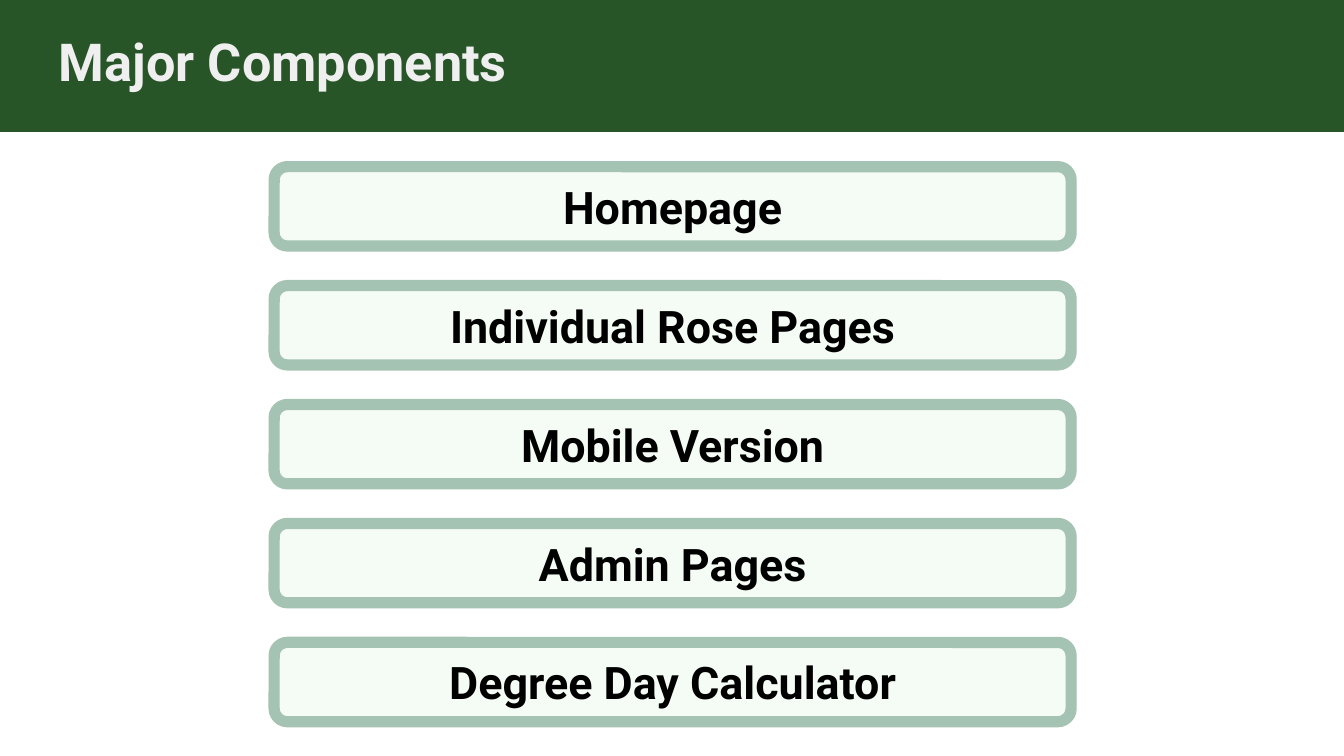
from pptx import Presentation
from pptx.dml.color import RGBColor
from pptx.enum import shapes, text
from pptx.util import Inches, Pt

COLORS = {
    "band": "285527",
    "panel": "FFFFFF",
    "title": "EFEFEF",
    "box": "F5FCF5",
    "edge": "A4C3B2",
    "label": "000000",
}
PARTS = [
    "Homepage",
    "Individual Rose Pages",
    "Mobile Version",
    "Admin Pages",
    "Degree Day Calculator",
]
FIRST, LAST = 1.24, 4.78
STEP = (LAST - FIRST) / (len(PARTS) - 1)


def color(name):
    return RGBColor.from_string(COLORS[name])


def paint(fill, name):
    fill.solid()
    fill.fore_color.rgb = color(name)


def write(frame, words, size, name, align, anchor):
    frame.word_wrap = True
    frame.vertical_anchor = anchor
    frame.margin_left = frame.margin_right = Inches(0.1)
    frame.margin_top = frame.margin_bottom = Inches(0.1)
    para = frame.paragraphs[0]
    para.alignment = align
    run = para.add_run()
    run.text = words
    run.font.name = "Roboto"
    run.font.size = Pt(size)
    run.font.bold = True
    run.font.color.rgb = color(name)


def add_panel(slide):
    """Add the white two-column table below the title band."""
    widths = [5, 6.05]
    grid = slide.shapes.add_table(
        1, 2, Inches(0), Inches(0.99), Inches(sum(widths)), Inches(4.64)
    ).table
    for col, width in zip(grid.columns, widths):
        col.width = Inches(width)
    for cell in grid.iter_cells():
        paint(cell.fill, "panel")


def add_title(slide, words):
    box = slide.shapes.add_textbox(
        Inches(0.34), Inches(0.12), Inches(9.32), Inches(0.66)
    )
    write(box.text_frame, words, 28, "title",
          text.PP_ALIGN.LEFT, text.MSO_ANCHOR.TOP)


def add_part(slide, top, words):
    box = slide.shapes.add_shape(
        shapes.MSO_SHAPE.ROUNDED_RECTANGLE,
        Inches(2.04), Inches(top), Inches(5.93), Inches(0.59),
    )
    box.shadow.inherit = False
    paint(box.fill, "box")
    box.line.color.rgb = color("edge")
    box.line.width = Pt(6)
    write(box.text_frame, words, 24, "label",
          text.PP_ALIGN.CENTER, text.MSO_ANCHOR.MIDDLE)


def main():
    deck = Presentation()
    deck.slide_width = Inches(10)
    deck.slide_height = Inches(10 * 9 / 16)
    slide = deck.slides.add_slide(deck.slide_layouts[6])
    paint(slide.background.fill, "band")
    add_panel(slide)
    add_title(slide, "Major Components")
    for row, words in enumerate(PARTS):
        add_part(slide, FIRST + row * STEP, words)
    deck.save("out.pptx")


if __name__ == "__main__":
    main()
